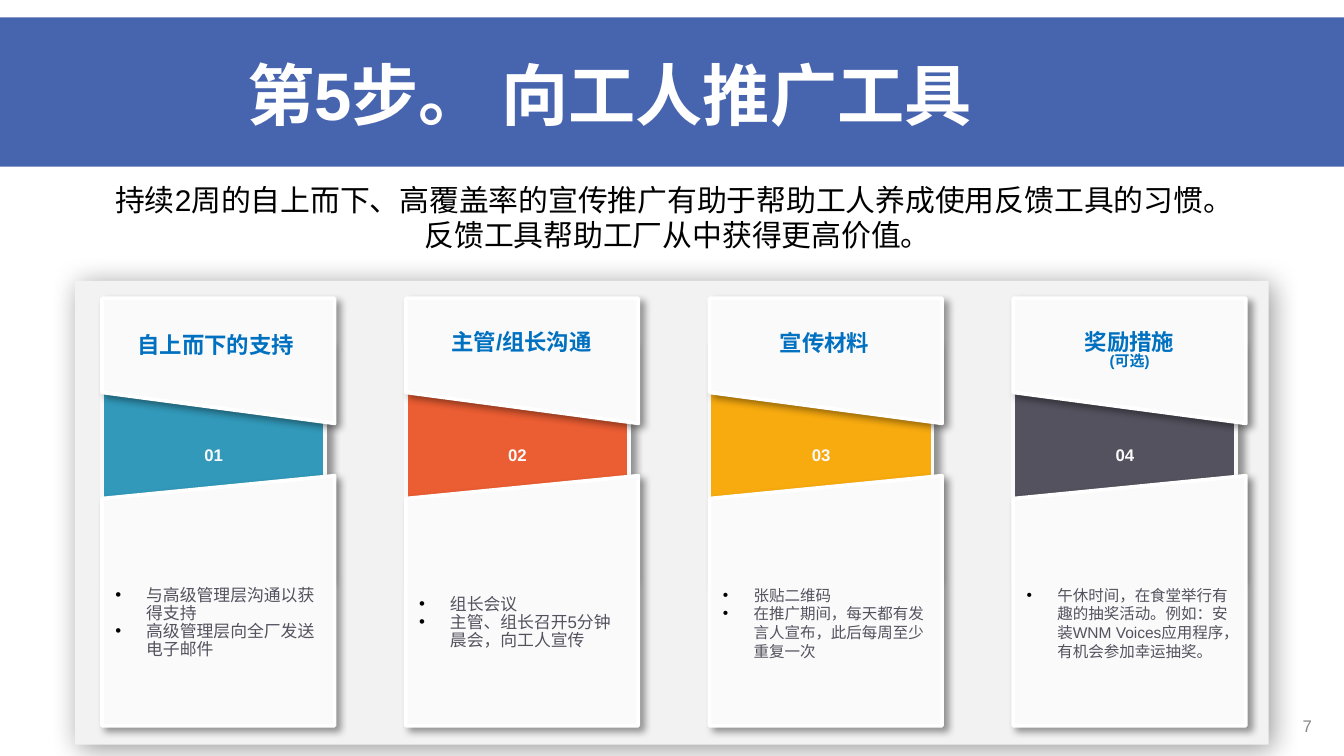
from dataclasses import dataclass

from lxml import etree
from pptx import Presentation
from pptx.dml.color import RGBColor
from pptx.enum.shapes import MSO_SHAPE
from pptx.enum.text import MSO_ANCHOR, PP_ALIGN
from pptx.oxml.ns import qn
from pptx.util import Inches, Pt

RECTANGLE = MSO_SHAPE.RECTANGLE
TOP, MIDDLE = MSO_ANCHOR.TOP, MSO_ANCHOR.MIDDLE
LEFT, CENTER, RIGHT = PP_ALIGN.LEFT, PP_ALIGN.CENTER, PP_ALIGN.RIGHT
FONT = "Arial"
PALE, GREY, BLUE = "FAFAFA", "53525E", "0070C0"
INSETS = (0.1, 0.05, 0.1, 0.05)
CARD_LEFT, CARD_TOP, CARD_STEP = 0.76, 2.22, 2.26
CARD_WIDTH, CARD_HEIGHT = 1.73, 3.18


@dataclass
class Card:
    """Content and heading placement of one card."""
    number: str
    color: str
    headings: list
    heading_box: tuple
    bullets: list
    bullet_size: float
    heading_spacing: float = 0.8
    bullet_spacing: float = 1.0


CARDS = [
    Card("01", "3299BA", [("自上而下的支持", 12)], (0.04, 0.23, 1.61, 0.25),
         ["与高级管理层沟通以获得支持", "高级管理层向全厂发送电子邮件"], 9,
         bullet_spacing=0.9),
    Card("02", "EB5D32", [("主管/组长沟通", 12)], (-0.23, 0.17, 2.18, 0.53),
         ["组长会议", "主管、组长召开5分钟晨会，向工人宣传"], 9,
         heading_spacing=1.0, bullet_spacing=0.9),
    Card("03", "F8AB0F", [("宣传材料", 12)], (0.05, 0.22, 1.61, 0.25),
         ["张贴二维码", "在推广期间，每天都有发言人宣布，此后每周至少重复一次"], 8.3),
    Card("04", GREY, [("奖励措施", 12), ("(可选)", 8)], (0.06, 0.21, 1.61, 0.25),
         ["午休时间，在食堂举行有趣的抽奖活动。例如：安装WNM Voices应用程序，有机会参加幸运抽奖。"], 8.3),
]


def rgb(value):
    """Turn a hex string into a colour."""
    return RGBColor.from_string(value)


def style(shape, fill, line=None):
    """Give a shape its fill and outline, without the theme shadow."""
    shape.shadow.inherit = False
    shape.fill.solid()
    shape.fill.fore_color.rgb = rgb(fill)
    if line:
        shape.line.color.rgb = rgb(line)
        shape.line.width = Pt(2)
    else:
        shape.line.fill.background()


def add_shadow(shape, blur, angle):
    """Add a soft black outer shadow to a styled shape."""
    effects = shape._element.spPr.find(qn("a:effectLst"))
    shadow = etree.SubElement(effects, qn("a:outerShdw"), blurRad=str(Pt(blur)),
                              dist=str(Pt(3)), dir=str(angle * 60000),
                              algn="tl", rotWithShape="0")
    color = etree.SubElement(shadow, qn("a:srgbClr"), val="000000")
    etree.SubElement(color, qn("a:alpha"), val="40000")


def add_bullet(paragraph):
    """Give a paragraph a black bullet with a hanging indent."""
    properties = paragraph._p.get_or_add_pPr()
    properties.set("marL", str(Inches(0.23)))
    properties.set("indent", str(-Inches(0.23)))
    color = etree.SubElement(properties, qn("a:buClr"))
    etree.SubElement(color, qn("a:srgbClr"), val="000000")
    etree.SubElement(properties, qn("a:buFont"), typeface=FONT)
    etree.SubElement(properties, qn("a:buChar"), char="•")


def write(shape, lines, color, bold=False, align=CENTER, anchor=TOP,
          insets=INSETS, spacing=1.0, bulleted=False):
    """Write (text, size) lines into a shape."""
    frame = shape.text_frame
    frame.word_wrap = True
    frame.vertical_anchor = anchor
    (frame.margin_left, frame.margin_top,
     frame.margin_right, frame.margin_bottom) = map(Inches, insets)
    frame.text = "\n".join(text for text, _ in lines)
    for paragraph, (_, size) in zip(frame.paragraphs, lines):
        paragraph.alignment = align
        if spacing != 1.0:
            paragraph.line_spacing = spacing
        if bulleted:
            add_bullet(paragraph)
        for run in paragraph.runs:
            run.font.name = FONT
            run.font.size = Pt(size)
            run.font.bold = bold
            run.font.color.rgb = rgb(color)


def add_text(shapes, box, lines, color, **options):
    """Add a text box at the given box."""
    write(shapes.add_textbox(*map(Inches, box)), lines, color, **options)


def add_header(slide, left, top, width):
    """Add the title band and the introduction below it."""
    band = slide.shapes.add_shape(RECTANGLE, *map(Inches, (left, top, width, 1.11)))
    style(band, "4764AE")
    introduction = ["持续2周的自上而下、高覆盖率的宣传推广有助于帮助工人养成使用反馈工具的习惯。",
                    " 反馈工具帮助工厂从中获得更高价值。"]
    add_text(slide.shapes, (left, top + 1.17, width + 0.04, 1.45),
             [(line, 16) for line in introduction], "000000")
    add_text(slide.shapes, (left + 1.74, top + 0.1, 8.21, 0.94),
             [("第5步。 向工人推广工具", 36)], "FFFFFF",
             bold=True, align=LEFT, anchor=MIDDLE)


def add_panel(slide, left, top, width, height):
    """Add the grey panel behind the cards."""
    panel = slide.shapes.add_shape(RECTANGLE, *map(Inches, (left, top, width, height)))
    style(panel, "F2F2F2")
    add_shadow(panel, 15, 45)


def add_card(slide, card, left, top, width, height):
    """Add a card: number band, slanted paper halves and heading."""
    shapes = slide.shapes.add_group_shape().shapes
    band = shapes.add_shape(RECTANGLE, *map(Inches, (left, top + 0.36, 1.66, 1.75)))
    style(band, card.color, PALE)
    add_shadow(band, 4, 0)
    write(band, [(card.number, 9)], PALE, bold=True, anchor=MIDDLE,
          insets=(0.1, 0.04, 0.1, 0.18))

    lower = [(width, 1.32), (width, height), (0, height), (0, 1.49)]
    upper = [(0, 0), (width, 0), (width, 0.93), (0, 0.7)]
    lower, upper = ([(Inches(left + x), Inches(top + y)) for x, y in half]
                    for half in (lower, upper))
    builder = shapes.build_freeform(*lower[0])
    builder.add_line_segments(lower[1:], close=True)
    builder.move_to(*upper[0])
    builder.add_line_segments(upper[1:], close=True)
    paper = builder.convert_to_shape()
    style(paper, PALE, "FFFFFF")
    add_shadow(paper, 4, 45)
    write(paper, [(text, card.bullet_size) for text in card.bullets], GREY,
          align=LEFT, anchor=MIDDLE, insets=(0.1, 1.65, 0.1, 0),
          spacing=card.bullet_spacing, bulleted=True)

    x, y, heading_width, heading_height = card.heading_box
    add_text(shapes, (left + x, top + y, heading_width, heading_height),
             card.headings, BLUE, bold=True, spacing=card.heading_spacing)


def main():
    """Build and save the slide."""
    presentation = Presentation()
    presentation.slide_width = Inches(10)
    presentation.slide_height = presentation.slide_width * 9 // 16
    slide = presentation.slides.add_slide(presentation.slide_layouts[6])
    add_header(slide, 0, 0.13, 10)
    add_panel(slide, 0.56, 2.09, 8.88, 3.45)
    for index, card in enumerate(CARDS):
        add_card(slide, card, CARD_LEFT + index * CARD_STEP, CARD_TOP,
                 CARD_WIDTH, CARD_HEIGHT)
    add_text(slide.shapes, (7.53, 5.25, 2.33, 0.3), [("7", 9)], "888888",
             align=RIGHT, anchor=MIDDLE)
    presentation.save("out.pptx")


if __name__ == "__main__":
    main()
